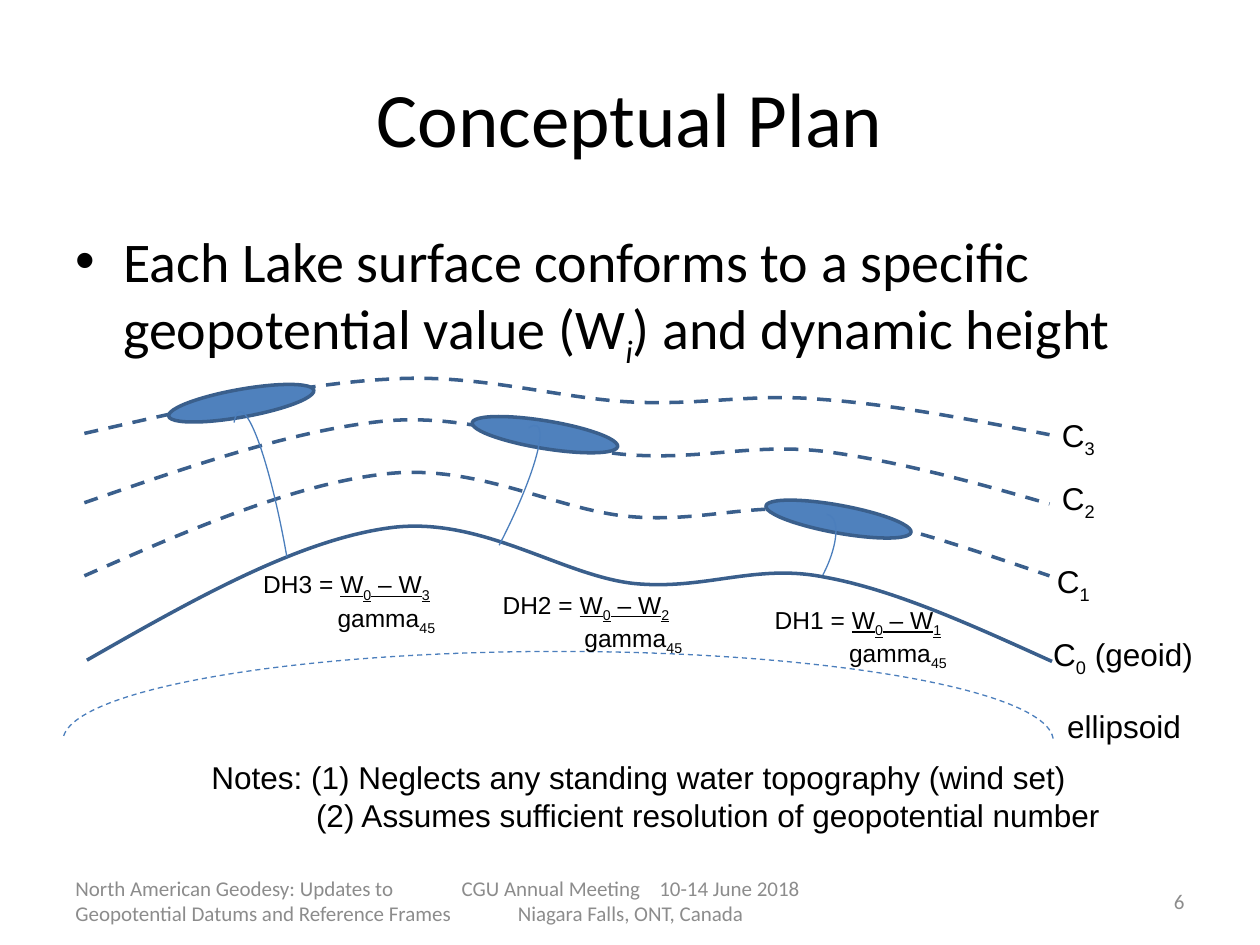
from dataclasses import dataclass

from lxml import etree
from pptx import Presentation
from pptx import util as u
from pptx.dml.color import RGBColor
from pptx.enum import dml, shapes, text
from pptx.oxml import ns

COLOURS = {"ink": "000000", "footer": "8C8C8C", "lake": "4F81BD",
           "level": "3A5F8C", "plumb": "4B7EBC"}
LEFT, CENTER, RIGHT = text.PP_ALIGN.LEFT, text.PP_ALIGN.CENTER, text.PP_ALIGN.RIGHT
TOP, MIDDLE = text.MSO_ANCHOR.TOP, text.MSO_ANCHOR.MIDDLE


@dataclass
class Span:
    text: str
    sub: bool = False
    underline: bool = False
    italic: bool = False
    spacing: int = 0  # hundredths of a point


@dataclass
class Line:
    spans: list[Span]
    margin: float = 0
    hanging: float = 0
    bullet: str = ""


@dataclass
class Style:
    size: int = 18
    font: str = "Arial"
    colour: str = "ink"
    align: int = LEFT
    anchor: int = TOP
    wrap: bool = True


@dataclass
class Level:
    """Equipotential curve: left shift, control point heights, dash."""
    shift: float
    heights: list[float]
    dashed: bool = True


@dataclass
class Lake:
    left: float
    top: float
    turn: float


@dataclass
class Plumb:
    left: float
    top: float
    height: float
    turn: float


@dataclass
class Formula:
    number: str
    left: float
    top: float
    width: float
    indent: float


def rgb(name: str) -> RGBColor:
    return RGBColor.from_string(COLOURS[name])


def add_text(page, left: float, top: float, width: float, height: float,
             lines: list[Line], style: Style) -> None:
    box = page.shapes.add_textbox(u.Inches(left), u.Inches(top),
                                  u.Inches(width), u.Inches(height))
    frame = box.text_frame
    frame.word_wrap = style.wrap
    frame.vertical_anchor = style.anchor
    for index, line in enumerate(lines):
        para = frame.add_paragraph() if index else frame.paragraphs[0]
        para.alignment = style.align
        props = para._p.get_or_add_pPr()
        if line.margin:
            props.set("marL", str(u.Inches(line.margin)))
            props.set("indent", str(u.Inches(-line.hanging)))
        if line.bullet:
            etree.SubElement(props, ns.qn("a:buFont")).set("typeface", "Arial")
            etree.SubElement(props, ns.qn("a:buChar")).set("char", line.bullet)
        for part in line.spans:
            span = para.add_run()
            span.text = part.text
            font = span.font
            font.size, font.name = u.Pt(style.size), style.font
            font.color.rgb = rgb(style.colour)
            font.italic, font.underline = part.italic, part.underline
            run_props = span._r.get_or_add_rPr()
            if part.sub:
                run_props.set("baseline", "-25000")
            if part.spacing:
                run_props.set("spc", str(part.spacing))


def outline(shape, colour: str, width: float, dashed: bool = False) -> None:
    shape.shadow.inherit = False
    shape.line.color.rgb = rgb(colour)
    shape.line.width = u.Pt(width)
    if dashed:
        shape.line.dash_style = dml.MSO_LINE.DASH


def add_level(page, level: Level) -> None:
    points = [(u.Inches(x + level.shift), u.Inches(y))
              for x, y in zip(LEVEL_X, level.heights)]
    builder = page.shapes.build_freeform(*points[0])
    builder.add_line_segments(points[1:], close=False)
    shape = builder.convert_to_shape()
    # Every three straight segments become one Bezier segment
    segments = list(shape._element.iter(ns.qn("a:lnTo")))
    for start in range(0, len(segments), 3):
        first, *others = segments[start:start + 3]
        first.tag = ns.qn("a:cubicBezTo")
        for other in others:
            first.append(other[0])
            other.getparent().remove(other)
    shape.fill.background()
    outline(shape, "level", 2, level.dashed)


def add_arc(page, left: float, top: float, width: float, height: float,
            start: float, turn: float = 0, dashed: bool = False) -> None:
    arc = page.shapes.add_shape(shapes.MSO_SHAPE.ARC, u.Inches(left), u.Inches(top),
                                u.Inches(width), u.Inches(height))
    arc.adjustments[0], arc.adjustments[1] = start, 0
    arc.rotation = turn
    arc.fill.background()
    outline(arc, "plumb", 0.75, dashed)


def add_lake(page, lake: Lake) -> None:
    oval = page.shapes.add_shape(shapes.MSO_SHAPE.OVAL, u.Inches(lake.left),
                                 u.Inches(lake.top), u.Inches(1.17), u.Inches(0.22))
    oval.rotation = lake.turn
    oval.fill.solid()
    oval.fill.fore_color.rgb = rgb("lake")
    outline(oval, "level", 2)


def add_formula(page, item: Formula) -> None:
    top_line = [Span(f"DH{item.number} = "), Span("W", underline=True),
                Span("0", sub=True, underline=True), Span(" – W", underline=True),
                Span(item.number, sub=True, underline=True)]
    below = [Span("gamma"), Span("45", sub=True)]
    add_text(page, item.left, item.top, item.width, 0.57,
             [Line(top_line), Line(below, margin=item.indent)], Style(14, wrap=False))


LEVEL_X = [0.67, 1.51, 2.34, 3.07, 3.79, 4.42, 5, 5.57, 5.97, 6.52, 7.08, 7.71, 8.33]
LEVELS = [
    Level(0.02, [5.24, 4.76, 4.29, 4.19, 4.09, 4.56, 4.63, 4.69, 4.47, 4.58, 4.68,
                 4.97, 5.25], dashed=False),
    Level(0, [4.57, 4.2, 3.84, 3.76, 3.68, 4.05, 4.1, 4.15, 3.98, 4.06, 4.14, 4.36, 4.57]),
    Level(0, [3.99, 3.7, 3.41, 3.34, 3.28, 3.57, 3.61, 3.65, 3.52, 3.58, 3.65, 3.82, 4]),
    Level(0, [3.44, 3.25, 3.05, 3.01, 2.96, 3.16, 3.19, 3.22, 3.12, 3.17, 3.21, 3.33, 3.45]),
]
LEVEL_LABELS = [("0", " (geoid)", 8.26, 4.99, 1.42), ("1", "", 8.29, 4.41, 0.5),
                ("2", "", 8.33, 3.75, 0.5), ("3", "", 8.33, 3.25, 0.5)]
LAKES = [Lake(1.33, 3.09, 349.9), Lake(3.74, 3.34, 9.3), Lake(6.07, 4.01, 10.3)]
PLUMBS = [Plumb(1.94, 3.25, 2.4, 350.1), Plumb(3.64, 3.27, 1.96, 27.4),
          Plumb(6.21, 4.04, 0.89, 27.4)]
FORMULAS = [Formula("3", 1.99, 4.47, 1.61, 0.59), Formula("2", 3.89, 4.63, 1.71, 0.65),
            Formula("1", 6.05, 4.75, 1.61, 0.59)]


def main() -> None:
    deck = Presentation()
    deck.slide_width, deck.slide_height = u.Inches(10), u.Inches(7.5)
    page = deck.slides.add_slide(deck.slide_layouts[6])

    # Title and statement
    add_text(page, 0.5, 0.3, 9, 1.25, [Line([Span("Conceptual Plan")])],
             Style(44, "Calibri", align=CENTER, anchor=MIDDLE))
    statement = [Span("Each Lake surface conforms to a specific geopotential value (W"),
                 Span("i", sub=True, italic=True), Span(") and dynamic height")]
    add_text(page, 0.5, 1.75, 9, 4.95,
             [Line(statement, margin=0.38, hanging=0.38, bullet="•")], Style(32, "Calibri"))

    # Footer
    project = [Line([Span("North American Geodesy: Updates to Geopotential Datums "
                          "and Reference Frames")])]
    meeting = [Line([Span("CGU Annual Meeting"), Span(" ", spacing=810),
                     Span("10-14 June 2018")]),
               Line([Span("Niagara Falls, ONT, Canada")])]
    for left, width, lines, align in [(0.5, 3.39, project, LEFT),
                                      (3.42, 3.17, meeting, CENTER),
                                      (7.17, 2.33, [Line([Span("6")])], RIGHT)]:
        add_text(page, left, 6.95, width, 0.4, lines,
                 Style(12, "Calibri", "footer", align, MIDDLE))

    # Ellipsoid and level surfaces
    add_arc(page, 0.5, 5.17, 7.86, 1.42, start=108.35, dashed=True)
    for level in LEVELS:
        add_level(page, level)
    add_text(page, 8.37, 5.56, 1.11, 0.4, [Line([Span("ellipsoid")])], Style(wrap=False))
    for number, suffix, left, top, width in LEVEL_LABELS:
        spans = [Span("C"), Span(number, sub=True)] + ([Span(suffix)] if suffix else [])
        add_text(page, left, top, width, 0.4, [Line(spans)], Style())

    # Lakes, plumb lines and dynamic heights
    for lake in LAKES:
        add_lake(page, lake)
    for plumb in PLUMBS:
        add_arc(page, plumb.left, plumb.top, 0.34, plumb.height, 160.17, plumb.turn)
    for formula in FORMULAS:
        add_formula(page, formula)

    # Notes
    add_text(page, 1.58, 5.97, 7.32, 0.71, [
        Line([Span("Notes: (1) Neglects any standing water topography (wind set)")]),
        Line([Span("(2) Assumes sufficient resolution of geopotential number")], margin=0.83),
    ], Style(wrap=False))

    deck.save("out.pptx")


if __name__ == "__main__":
    main()
